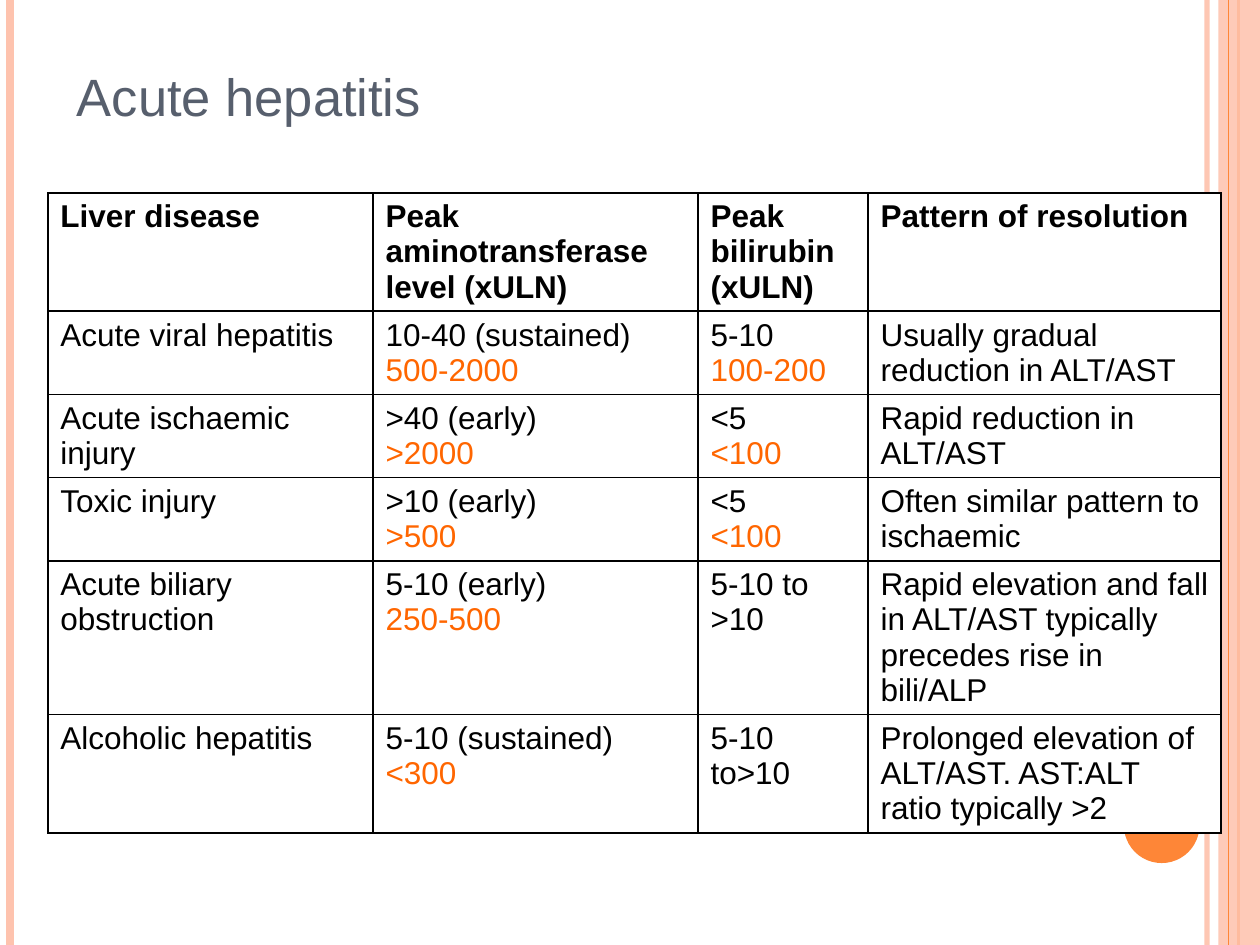
"""Build the acute hepatitis slide with its comparison table."""
from lxml.etree import SubElement
from pptx import Presentation
from pptx.dml.color import RGBColor
from pptx.enum.shapes import MSO_CONNECTOR, MSO_SHAPE
from pptx.enum.text import MSO_ANCHOR, MSO_AUTO_SIZE, PP_ALIGN
from pptx.oxml.ns import qn
from pptx.util import Inches, Pt

PEACH = RGBColor(0xFE, 0xC3, 0xAE)
ORANGE = RGBColor(0xFE, 0x86, 0x37)
SLATE = RGBColor(0x57, 0x5F, 0x6D)
BLACK = RGBColor(0, 0, 0)
WHITE = RGBColor(0xFF, 0xFF, 0xFF)
HIGHLIGHT = RGBColor(0xFF, 0x66, 0x00)
FONT = "Arial"

COLUMN_WIDTHS = [2.58, 2.58, 1.35, 2.8]
ROW_HEIGHT = 0.41
ROWS = [
    [["Liver disease"], ["Peak aminotransferase level (xULN)"],
     ["Peak bilirubin (xULN)"], ["Pattern of resolution"]],
    [["Acute viral hepatitis"], ["10-40 (sustained)", "500-2000"],
     ["5-10", "100-200"], ["Usually gradual reduction in ALT/AST"]],
    [["Acute ischaemic injury"], [">40 (early)", ">2000"],
     ["<5", "<100"], ["Rapid reduction in ALT/AST"]],
    [["Toxic injury"], [">10 (early)", ">500"],
     ["<5", "<100"], ["Often similar pattern to ischaemic"]],
    [["Acute biliary obstruction"], ["5-10 (early)", "250-500"],
     ["5-10 to >10"],
     ["Rapid elevation and fall in ALT/AST typically precedes rise in bili/ALP"]],
    [["Alcoholic hepatitis"], ["5-10 (sustained)", "<300"],
     ["5-10 to>10"],
     ["Prolonged elevation of ALT/AST. AST:ALT ratio typically >2"]],
]


def add_stripe(page, left, width, color):
    stripe = page.shapes.add_connector(
        MSO_CONNECTOR.STRAIGHT, Inches(left), 0, Inches(left), Inches(7.5))
    stripe.line.color.rgb = color
    stripe.line.width = Pt(width)
    SubElement(stripe._element.spPr, qn("a:effectLst"))
    return stripe


def add_span(para, text, size, color, bold=False):
    span = para.add_run()
    span.text = text
    span.font.name = FONT
    span.font.size = Pt(size)
    span.font.bold = bold
    span.font.color.rgb = color


deck = Presentation()
deck.slide_width = Inches(10)
deck.slide_height = Inches(7.5)
page = deck.slides.add_slide(deck.slide_layouts[5])

translucent = [(add_stripe(page, 9.58, 3, PEACH), 93000)]
add_stripe(page, 0.08, 4.5, PEACH)
add_stripe(page, 9.83, 1.5, ORANGE)
band = page.shapes.add_shape(
    MSO_SHAPE.RECTANGLE, Inches(9.67), 0, Inches(0.33), Inches(7.5))
add_stripe(page, 9.75, 0.75, ORANGE)
disc = page.shapes.add_shape(
    MSO_SHAPE.OVAL, Inches(8.92), Inches(6.25), Inches(0.6), Inches(0.6))
for shape, color in [(band, PEACH), (disc, ORANGE)]:
    shape.shadow.inherit = False
    shape.fill.solid()
    shape.fill.fore_color.rgb = color
    shape.line.fill.background()

translucent.append((band, 87000))
for shape, opacity in translucent:
    color_node = next(shape._element.spPr.iter(qn("a:srgbClr")))
    SubElement(color_node, qn("a:alpha"), val=str(opacity))

title = page.shapes.title
title.left, title.top = Inches(0.51), Inches(-0.19)
title.width, title.height = Inches(8.17), Inches(1.25)
title.text_frame.word_wrap = True
title.text_frame.auto_size = MSO_AUTO_SIZE.NONE
title.text_frame.vertical_anchor = MSO_ANCHOR.BOTTOM
heading = title.text_frame.paragraphs[0]
heading.alignment = PP_ALIGN.LEFT
add_span(heading, "Acute hepatitis", 30, SLATE)

table = page.shapes.add_table(
    len(ROWS), len(COLUMN_WIDTHS), Inches(0.38), Inches(1.53),
    Inches(sum(COLUMN_WIDTHS)), Inches(ROW_HEIGHT * len(ROWS))).table
table.horz_banding = False
for column, width in zip(table.columns, COLUMN_WIDTHS):
    column.width = Inches(width)

for row_index, row in enumerate(ROWS):
    table.rows[row_index].height = Inches(ROW_HEIGHT)
    for column_index, lines in enumerate(row):
        cell = table.cell(row_index, column_index)
        properties = cell._tc.get_or_add_tcPr()
        for side in ("a:lnL", "a:lnR", "a:lnT", "a:lnB"):
            border = SubElement(properties, qn(side), w=str(Pt(1)))
            paint = SubElement(border, qn("a:solidFill"))
            SubElement(paint, qn("a:srgbClr"), val=str(BLACK))
        cell.fill.solid()
        cell.fill.fore_color.rgb = WHITE
        frame = cell.text_frame
        for line_index, text in enumerate(lines):
            para = frame.add_paragraph() if line_index else frame.paragraphs[0]
            color = HIGHLIGHT if line_index else BLACK
            add_span(para, text, 18, color, bold=row_index == 0)

deck.save("out.pptx")
